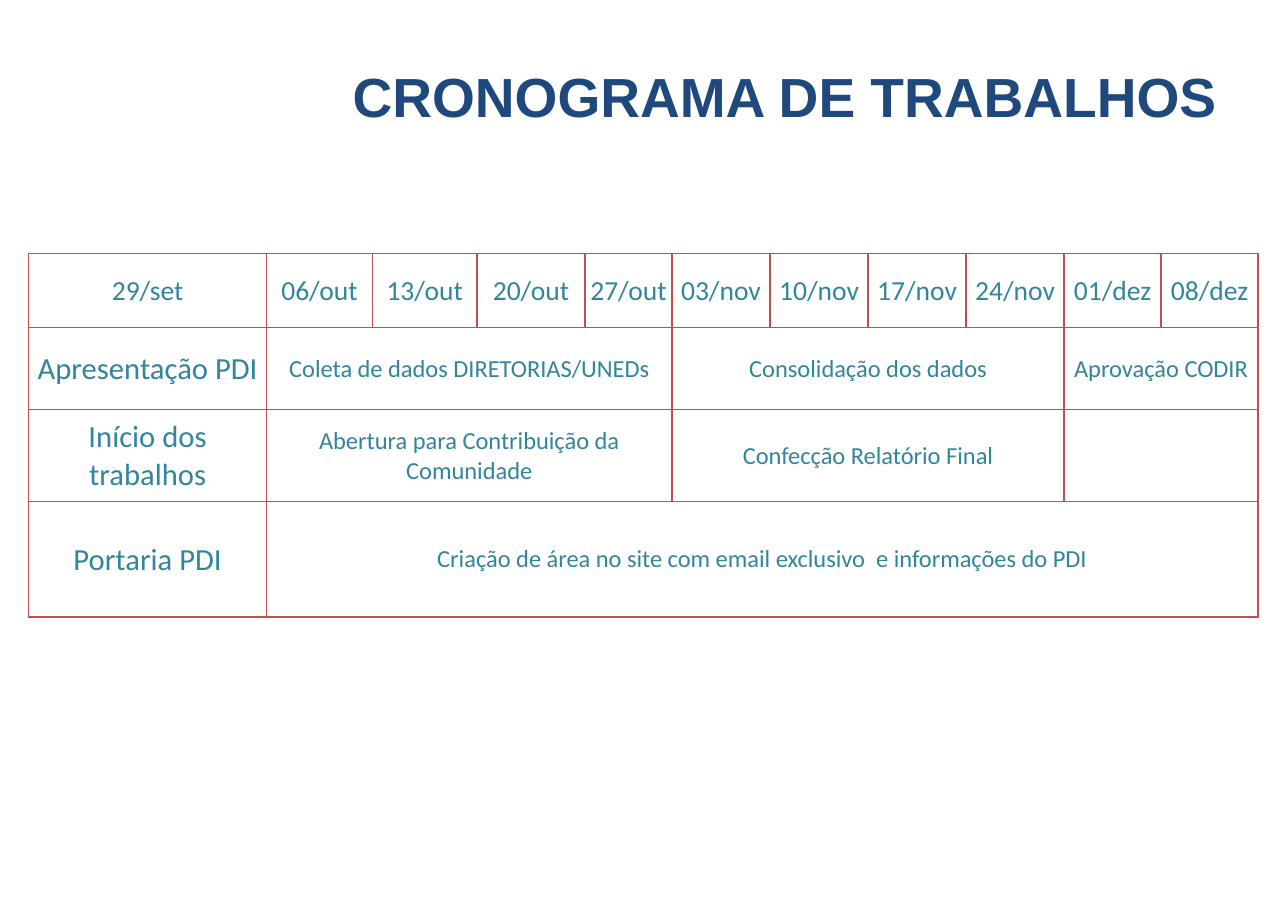
from pptx import Presentation
from pptx import util as u
from pptx.dml.color import RGBColor
from pptx.enum import text as t
from pptx.oxml import parse_xml
from pptx.oxml.ns import nsdecls

PX = 9144  # 100 px to the inch
COLORS = {"title": "1F497D", "text": "31859C", "line": "C0504D"}

COLS = [216, 96, 95, 98, 79, 89, 89, 89, 89, 88, 88]
ROWS = [67, 75, 83, 105]
DATES = ["29/set", "06/out", "13/out", "20/out", "27/out", "03/nov",
         "10/nov", "17/nov", "24/nov", "01/dez", "08/dez"]
# Each task: text and number of columns it spans
TASKS = [
    [("Apresentação PDI", 1), ("Coleta de dados DIRETORIAS/UNEDs", 4),
     ("Consolidação dos dados", 4), ("Aprovação CODIR", 2)],
    [("Início dos trabalhos", 1), ("Abertura para Contribuição da Comunidade", 4),
     ("Confecção Relatório Final", 4), ("", 2)],
    [("Portaria PDI", 1),
     ("Criação de área no site com email exclusivo  e informações do PDI", 10)],
]


def px(n):
    return u.Emu(n * PX)


def write(frame, words, size, color, font="Calibri", bold=False,
          align=t.PP_ALIGN.CENTER):
    para = frame.paragraphs[0]
    para.alignment = align
    if not words:
        return
    run = para.add_run()
    run.text = words
    run.font.size = u.Pt(size)
    run.font.name = font
    run.font.bold = bold
    run.font.color.rgb = RGBColor.from_string(COLORS[color])


def style(cell):
    """Set the insets, the four borders and the empty fill of a cell."""
    cell.margin_left = cell.margin_right = cell.margin_top = px(1)
    cell.margin_bottom = 0
    cell.vertical_anchor = t.MSO_ANCHOR.MIDDLE
    props = cell._tc.get_or_add_tcPr()
    for side in "LRTB":
        props.append(parse_xml(
            f'<a:ln{side} {nsdecls("a")} w="{u.Pt(1)}"><a:solidFill>'
            f'<a:srgbClr val="{COLORS["line"]}"/></a:solidFill></a:ln{side}>'))
    cell.fill.background()


def heading(slide, x, y, w, h):
    title = slide.shapes.title
    title.left, title.top, title.width, title.height = map(px, (x, y, w, h))
    frame = title.text_frame
    frame.word_wrap = False
    frame.auto_size = t.MSO_AUTO_SIZE.NONE
    frame.vertical_anchor = t.MSO_ANCHOR.TOP
    write(frame, "CRONOGRAMA DE TRABALHOS", 36, "title", font="Arial",
          bold=True, align=t.PP_ALIGN.LEFT)


def schedule(slide, x, y):
    table = slide.shapes.add_table(
        len(ROWS), len(COLS), px(x), px(y), px(sum(COLS)), px(sum(ROWS))).table
    table.first_row = table.horz_banding = False
    for col, wide in zip(table.columns, COLS):
        col.width = px(wide)
    for row, high in zip(table.rows, ROWS):
        row.height = px(high)
    for cell in table.iter_cells():
        style(cell)
    for c, date in enumerate(DATES):
        write(table.cell(0, c).text_frame, date, 18, "text")
    for r, tasks in enumerate(TASKS, 1):
        c = 0
        for words, span in tasks:
            cell = table.cell(r, c)
            if span > 1:
                cell.merge(table.cell(r, c + span - 1))
            write(cell.text_frame, words, 16 if c else 20, "text")
            c += span


def main():
    deck = Presentation()
    deck.slide_width, deck.slide_height = px(1169), px(826)
    slide = deck.slides.add_slide(deck.slide_layouts[5])
    heading(slide, 310, 52, 812, 71)
    schedule(slide, 26, 230)
    deck.save("out.pptx")


if __name__ == "__main__":
    main()
